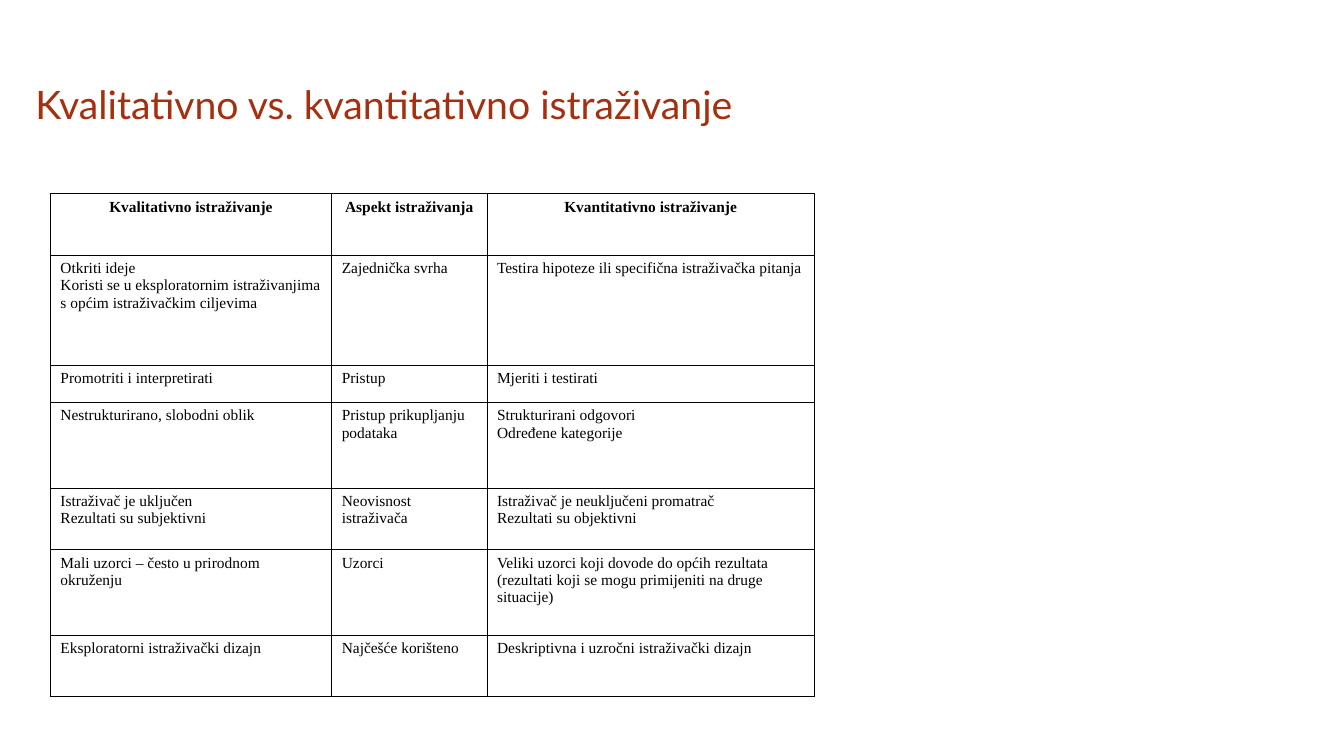
from pptx import Presentation
from pptx.dml.color import RGBColor
from pptx.enum.text import MSO_ANCHOR, MSO_AUTO_SIZE, PP_ALIGN
from pptx.oxml import parse_xml
from pptx.oxml.ns import nsdecls
from pptx.util import Inches, Pt

TITLE = "Kvalitativno vs. kvantitativno istraživanje"
COLS = [2.79, 1.54, 3.25]
HIGHS = [0.61, 1.09, 0.37, 0.85, 0.61, 0.85, 0.61]
# Each line break inside a cell starts a new paragraph
ROWS = [
    ("Kvalitativno istraživanje", "Aspekt istraživanja",
     "Kvantitativno istraživanje"),
    ("Otkriti ideje\nKoristi se u eksploratornim istraživanjima "
     "s općim istraživačkim ciljevima",
     "Zajednička svrha",
     "Testira hipoteze ili specifična istraživačka pitanja"),
    ("Promotriti i interpretirati", "Pristup", "Mjeriti i testirati"),
    ("Nestrukturirano, slobodni oblik", "Pristup prikupljanju podataka",
     "Strukturirani odgovori\nOdređene kategorije"),
    ("Istraživač je uključen\nRezultati su subjektivni",
     "Neovisnost istraživača",
     "Istraživač je neuključeni promatrač\nRezultati su objektivni"),
    ("Mali uzorci – često u prirodnom okruženju", "Uzorci",
     "Veliki uzorci koji dovode do općih rezultata "
     "(rezultati koji se mogu primijeniti na druge situacije)"),
    ("Eksploratorni istraživački dizajn", "Najčešće korišteno",
     "Deskriptivna i uzročni istraživački dizajn"),
]


def color(code):
    return RGBColor.from_string(code)


def write(frame, text, font="Times New Roman", size=11, tint="000000",
          bold=False, align=PP_ALIGN.LEFT):
    frame.text = text
    frame.word_wrap = True
    for para in frame.paragraphs:
        para.alignment = align
        para.line_spacing = 1.0
        para.space_before = Pt(0)
        for run in para.runs:
            run.font.name = font
            run.font.size = Pt(size)
            run.font.bold = bold
            run.font.color.rgb = color(tint)


def border(cell, code, width):
    props = cell._tc.get_or_add_tcPr()
    for place, side in enumerate(("lnL", "lnR", "lnT", "lnB")):
        props.insert(place, parse_xml(
            f'<a:{side} {nsdecls("a")} w="{Pt(width)}"><a:solidFill>'
            f'<a:srgbClr val="{code}"/></a:solidFill></a:{side}>'))


def add_title(slide):
    title = slide.shapes.title
    title.left, title.top = Inches(0.25), Inches(0.75)
    title.width, title.height = Inches(7.75), Inches(1.36)
    frame = title.text_frame
    write(frame, TITLE, font="Lato", size=28, tint="A5300F")
    frame.vertical_anchor = MSO_ANCHOR.TOP
    frame.auto_size = MSO_AUTO_SIZE.NONE


def add_grid(slide):
    table = slide.shapes.add_table(
        len(ROWS), len(COLS), Inches(0.5), Inches(1.92),
        Inches(sum(COLS)), Inches(sum(HIGHS))).table
    table.first_row = table.horz_banding = False
    for col, width in zip(table.columns, COLS):
        col.width = Inches(width)
    for index, (row, high, texts) in enumerate(zip(table.rows, HIGHS, ROWS)):
        row.height = Inches(high)
        head = index == 0
        for cell, text in zip(row.cells, texts):
            cell.fill.background()
            border(cell, "000000", 0.45)
            write(cell.text_frame, text, bold=head,
                  align=PP_ALIGN.CENTER if head else PP_ALIGN.LEFT)


def main():
    deck = Presentation()
    deck.slide_width, deck.slide_height = Inches(13.33), Inches(7.5)
    # Title Only layout
    slide = deck.slides.add_slide(deck.slide_layouts[5])
    add_title(slide)
    add_grid(slide)
    deck.save("out.pptx")


if __name__ == "__main__":
    main()
